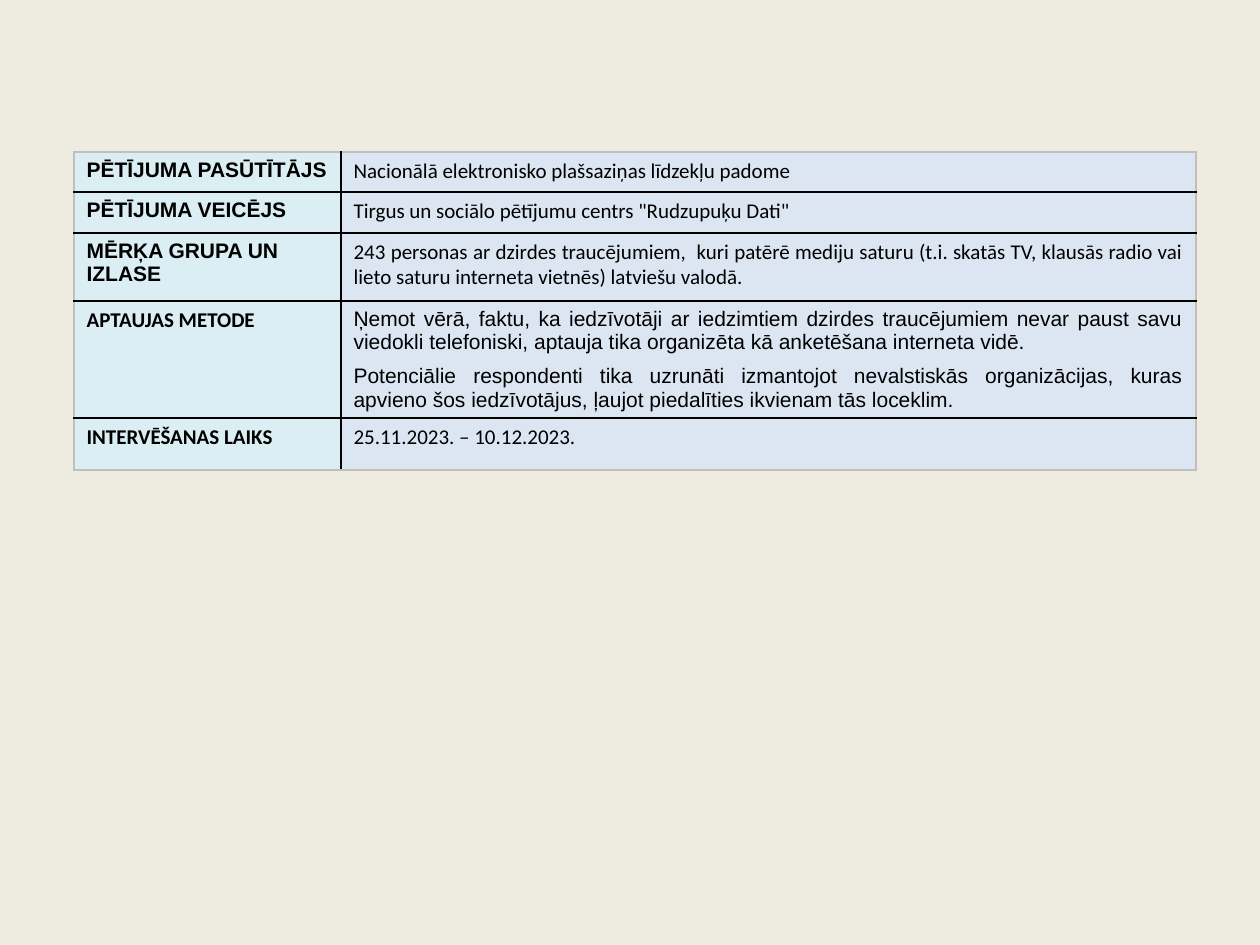
from lxml import etree
from pptx import Presentation
from pptx.dml.color import RGBColor
from pptx.enum.text import PP_ALIGN
from pptx.oxml.ns import qn
from pptx.util import Emu, Pt

LEFT, JUST = PP_ALIGN.LEFT, PP_ALIGN.JUSTIFY
SCALE = 914400 / 126

PAPER = RGBColor(0xEE, 0xEC, 0xE1)
AQUA = RGBColor(0xDB, 0xEE, 0xF4)
BLUE = RGBColor(0xDC, 0xE6, 0xF2)
BLACK = RGBColor(0, 0, 0)
GREY = RGBColor(0xBF, 0xBF, 0xBF)

COLS = [267, 855]
# Row height, label, label font, texts, text font, alignment
ROWS = [
    (40, "PĒTĪJUMA PASŪTĪTĀJS", "Arial",
     ["Nacionālā elektronisko plašsaziņas līdzekļu padome"], "Calibri", JUST),
    (41, "PĒTĪJUMA VEICĒJS", "Arial",
     ['Tirgus un sociālo pētījumu centrs "Rudzupuķu Dati"'], "Calibri", JUST),
    (68, "MĒRĶA GRUPA UN IZLASE", "Arial",
     ["243 personas ar dzirdes traucējumiem,  kuri patērē mediju saturu "
      "(t.i. skatās TV, klausās radio vai lieto saturu interneta vietnēs) "
      "latviešu valodā."], "Calibri", JUST),
    (117, "APTAUJAS METODE", "Calibri",
     ["Ņemot vērā, faktu, ka iedzīvotāji ar iedzimtiem dzirdes traucējumiem "
      "nevar paust savu viedokli telefoniski, aptauja tika organizēta kā "
      "anketēšana interneta vidē.",
      "Potenciālie respondenti tika uzrunāti izmantojot nevalstiskās "
      "organizācijas, kuras apvieno šos iedzīvotājus, ļaujot piedalīties "
      "ikvienam tās loceklim."], "Arial", JUST),
    (52, "INTERVĒŠANAS LAIKS", "Calibri",
     ["25.11.2023. – 10.12.2023."], "Calibri", LEFT),
]


def px(n):
    return Emu(round(n * SCALE))


def write(cell, texts, font, bold, align):
    frame = cell.text_frame
    for i, text in enumerate(texts):
        para = frame.add_paragraph() if i else frame.paragraphs[0]
        para.alignment = align
        if i:
            para.space_before = Pt(6)
        run = para.add_run()
        run.text = text
        run.font.name = font
        run.font.size = Pt(12)
        run.font.bold = bold
        run.font.color.rgb = BLACK


def edge(cell, colors):
    """Draw the left, right, top and bottom borders, in that order."""
    props = cell._tc.get_or_add_tcPr()
    for i, (side, color) in enumerate(zip("LRTB", colors)):
        line = etree.Element(qn(f"a:ln{side}"), w=str(Pt(1)))
        fill = etree.SubElement(line, qn("a:solidFill"))
        etree.SubElement(fill, qn("a:srgbClr"), val=str(color))
        props.insert(i, line)


def paint(cell, color):
    cell.fill.solid()
    cell.fill.fore_color.rgb = color


def add_grid(slide):
    heights = [row[0] for row in ROWS]
    table = slide.shapes.add_table(
        len(ROWS), len(COLS), px(74), px(152),
        px(sum(COLS)), px(sum(heights))).table
    for col, width in zip(table.columns, COLS):
        col.width = px(width)
    for i, (high, label, face, texts, font, align) in enumerate(ROWS):
        table.rows[i].height = px(high)
        head, body = table.cell(i, 0), table.cell(i, 1)
        write(head, [label], face, True, LEFT)
        write(body, texts, font, False, align)
        paint(head, AQUA)
        paint(body, BLUE)
        # Grey around the table, black inside it
        top = BLACK if i else GREY
        low = BLACK if i < len(ROWS) - 1 else GREY
        edge(head, (GREY, BLACK, top, low))
        edge(body, (BLACK, GREY, top, low))


def main():
    deck = Presentation()
    deck.slide_width, deck.slide_height = px(1260), px(945)
    slide = deck.slides.add_slide(deck.slide_layouts[6])
    # Background
    back = slide.background.fill
    back.solid()
    back.fore_color.rgb = PAPER
    # Survey facts
    add_grid(slide)
    deck.save("out.pptx")


if __name__ == "__main__":
    main()
